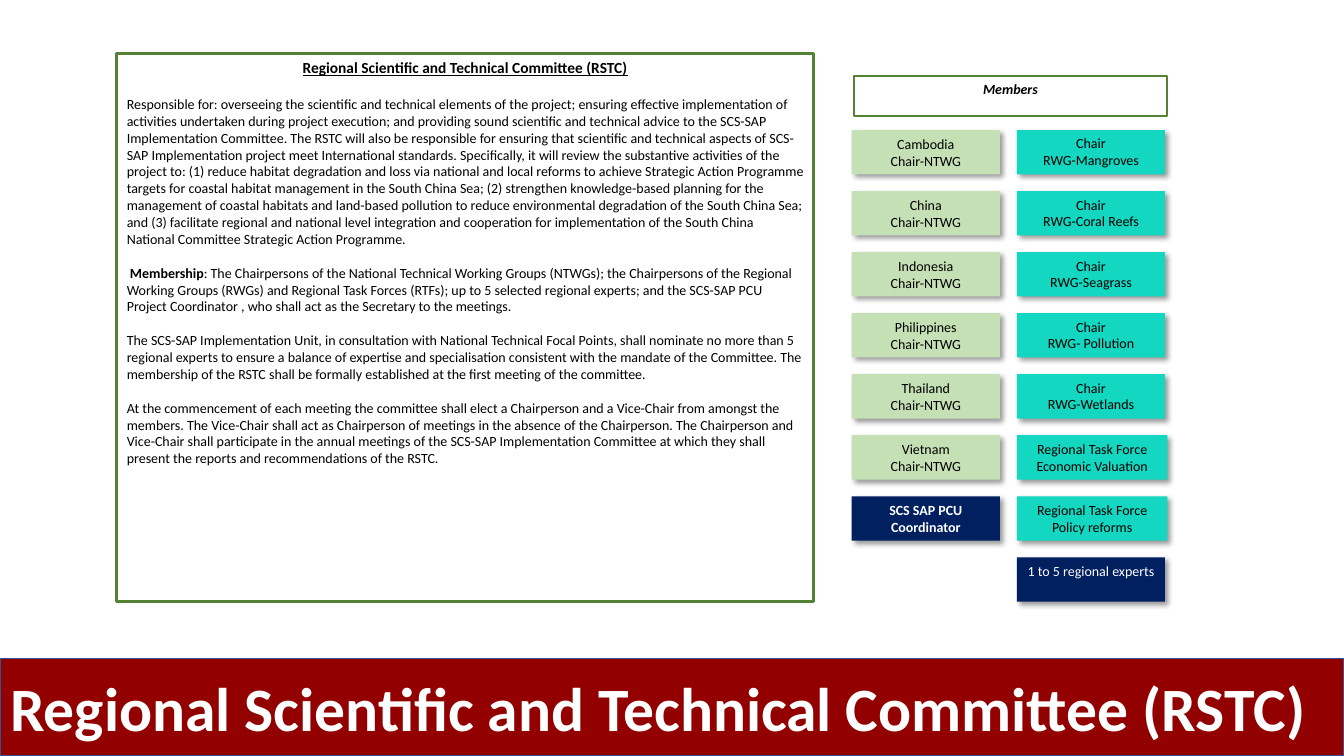
from lxml.etree import SubElement
from pptx import Presentation
from pptx.dml.color import RGBColor
from pptx.enum.shapes import MSO_SHAPE
from pptx.enum.text import MSO_ANCHOR as Anchor, MSO_AUTO_SIZE as AutoSize, PP_ALIGN as Align
from pptx.oxml.ns import qn
from pptx.util import Pt

GREEN, PALE_GREEN, TEAL, NAVY, RED = "548235", "C5E0B4", "13D7C0", "002060", "920000"
BLACK, WHITE = "000000", "FFFFFF"
COMMITTEE = "Regional Scientific and Technical Committee (RSTC)"

DUTIES = (
    "Responsible for: overseeing the scientific and technical elements of the project; ensuring "
    "effective implementation of activities undertaken during project execution; and providing sound "
    "scientific and technical advice to the SCS-SAP Implementation Committee. The RSTC will also be "
    "responsible for ensuring that scientific and technical aspects of SCS-SAP Implementation project "
    "meet International standards.")
REVIEW = (
    "Specifically, it will review the substantive activities of the "
    "project to: (1) reduce habitat degradation and loss via national and local reforms to achieve "
    "Strategic Action Programme targets for coastal habitat management in the South China Sea; (2) "
    "strengthen knowledge-based planning for the management of coastal habitats and land-based "
    "pollution to reduce environmental degradation of the South China Sea; and (3) facilitate regional "
    "and national level integration and cooperation for implementation of the South China National "
    "Committee Strategic Action Programme.")
MANDATE = [
    ("", f"{DUTIES} {REVIEW}"),
    (" Membership", ": The Chairpersons of the National Technical Working Groups (NTWGs); the "
     "Chairpersons of the Regional Working Groups (RWGs) and Regional Task Forces (RTFs); up to 5 "
     "selected regional experts; and the SCS-SAP PCU Project Coordinator , who shall act as the "
     "Secretary to the meetings."),
    ("", "The SCS-SAP Implementation Unit, in consultation with National Technical Focal Points, shall "
     "nominate no more than 5 regional experts to ensure a balance of expertise and specialisation "
     "consistent with the mandate of the Committee. The membership of the RSTC shall be formally "
     "established at the first meeting of the committee."),
    ("", "At the commencement of each meeting the committee shall elect a Chairperson and a Vice-Chair "
     "from amongst the members. The Vice-Chair shall act as Chairperson of meetings in the absence of "
     "the Chairperson. The Chairperson and Vice-Chair shall participate in the annual meetings of the "
     "SCS-SAP Implementation Committee at which they shall present the reports and recommendations of "
     "the RSTC."),
]
COUNTRIES = ["Cambodia", "China", "Indonesia", "Philippines", "Thailand", "Vietnam"]
WORKING_GROUPS = ["RWG-Mangroves", "RWG-Coral Reefs", "RWG-Seagrass", "RWG- Pollution", "RWG-Wetlands"]
TASK_FORCES = ["Economic Valuation", "Policy reforms"]


def paint(color_format, hex_color):
    """Set a colour from a hex string."""
    color_format.rgb = RGBColor.from_string(hex_color)


def style(paragraph, size, color=BLACK, bold=False, italic=False, underline=False):
    """Format every run of a paragraph."""
    for run in paragraph.runs:
        font = run.font
        font.name, font.size = "Calibri", Pt(size)
        font.bold, font.italic, font.underline = bold, italic, underline
        paint(font.color, color)


def add_box(slide, left, top, width, height, fill=None, line=None, line_width=1):
    """Add a rectangle with text starting at its top."""
    box = slide.shapes.add_shape(MSO_SHAPE.RECTANGLE, Pt(left), Pt(top), Pt(width), Pt(height))
    box.shadow.inherit = False
    if fill:
        box.fill.solid()
        paint(box.fill.fore_color, fill)
    else:
        box.fill.background()
    if line:
        paint(box.line.color, line)
        box.line.width = Pt(line_width)
    else:
        box.line.fill.background()
    box.text_frame.word_wrap = True
    box.text_frame.vertical_anchor = Anchor.TOP
    return box


def cast_shadow(box):
    """Give a box a soft shadow to its lower right."""
    effects = box._element.spPr.find(qn("a:effectLst"))
    shadow = SubElement(effects, qn("a:outerShdw"), blurRad=str(Pt(4)), dist=str(Pt(3)),
                        dir="2700000", algn="tl", rotWithShape="0")
    black = SubElement(shadow, qn("a:srgbClr"), val=BLACK)
    SubElement(black, qn("a:alpha"), val="40000")


def add_mandate(slide, left, top, width, height):
    """Place the framed description of the committee."""
    frame = add_box(slide, left, top, width, height, line=GREEN, line_width=2.25).text_frame
    heading = frame.paragraphs[0]
    heading.text = COMMITTEE
    heading.alignment = Align.CENTER
    heading.space_after = Pt(13.4)
    style(heading, 11, bold=True, underline=True)
    for lead, body in MANDATE:
        paragraph = frame.add_paragraph()
        paragraph.alignment = Align.LEFT
        paragraph.space_after = Pt(12.2)
        for words in filter(None, (lead, body)):
            paragraph.add_run().text = words
        style(paragraph, 10)
        if lead:
            paragraph.runs[0].font.bold = True


def add_member(slide, left, top, width, text, fill, color=BLACK, bold=False):
    """Place one member card and return its text frame."""
    card = add_box(slide, left, top, width, 31.7, fill)
    cast_shadow(card)
    card.text_frame.text = text
    for paragraph in card.text_frame.paragraphs:
        paragraph.alignment = Align.CENTER
        style(paragraph, 10, color, bold)
    return card.text_frame


def add_members(slide, left, top, width):
    """Place the members heading and the two columns of cards below it."""
    heading = add_box(slide, left + 1.4, top, width - 1.4, 28.8, line=GREEN, line_width=1.5)
    label = heading.text_frame.paragraphs[0]
    label.text = "Members"
    label.alignment = Align.CENTER
    style(label, 10, bold=True, italic=True)

    card_width, pitch, first_row, right = 105.8, 43.6, top + 38.9, left + 118
    for row, country in enumerate(COUNTRIES):
        card = add_member(slide, left, first_row + row * pitch, card_width,
                          f"{country}\nChair-NTWG", PALE_GREEN)
        card.vertical_anchor = Anchor.MIDDLE
    add_member(slide, left, first_row + len(COUNTRIES) * pitch, card_width,
               "SCS SAP PCU Coordinator", NAVY, WHITE, bold=True)

    groups = [("Chair", group, card_width) for group in WORKING_GROUPS]
    groups += [("Regional Task Force", force, width - 118) for force in TASK_FORCES]
    for row, (role, group, group_width) in enumerate(groups):
        card = add_member(slide, right, first_row + row * pitch, group_width, f"{role}\n{group}", TEAL)
        card.auto_size = AutoSize.SHAPE_TO_FIT_TEXT
    add_member(slide, right, first_row + len(groups) * pitch, card_width,
               "1 to 5 regional experts", NAVY, WHITE)


def add_title(slide, left, top, width, height):
    """Turn the title placeholder into the banner."""
    title = slide.shapes.title
    title.left, title.top, title.width, title.height = Pt(left), Pt(top), Pt(width), Pt(height)
    title.fill.solid()
    paint(title.fill.fore_color, RED)
    paint(title.line.color, "325491")
    title.line.width = Pt(1)
    frame = title.text_frame
    frame.text = COMMITTEE
    frame.word_wrap = True
    frame.auto_size = AutoSize.NONE
    frame.vertical_anchor = Anchor.MIDDLE
    frame.paragraphs[0].alignment = Align.LEFT
    style(frame.paragraphs[0], 44, WHITE, bold=True)


def main():
    """Build and save the presentation."""
    presentation = Presentation()
    presentation.slide_width, presentation.slide_height = Pt(960), Pt(540)
    slide = presentation.slides.add_slide(presentation.slide_layouts[5])
    add_mandate(slide, 83.5, 38.2, 497.5, 391.7)
    add_members(slide, 608.4, 54, 225.4)
    add_title(slide, 0, 470.2, 960, 69.8)
    presentation.save("out.pptx")


if __name__ == "__main__":
    main()
